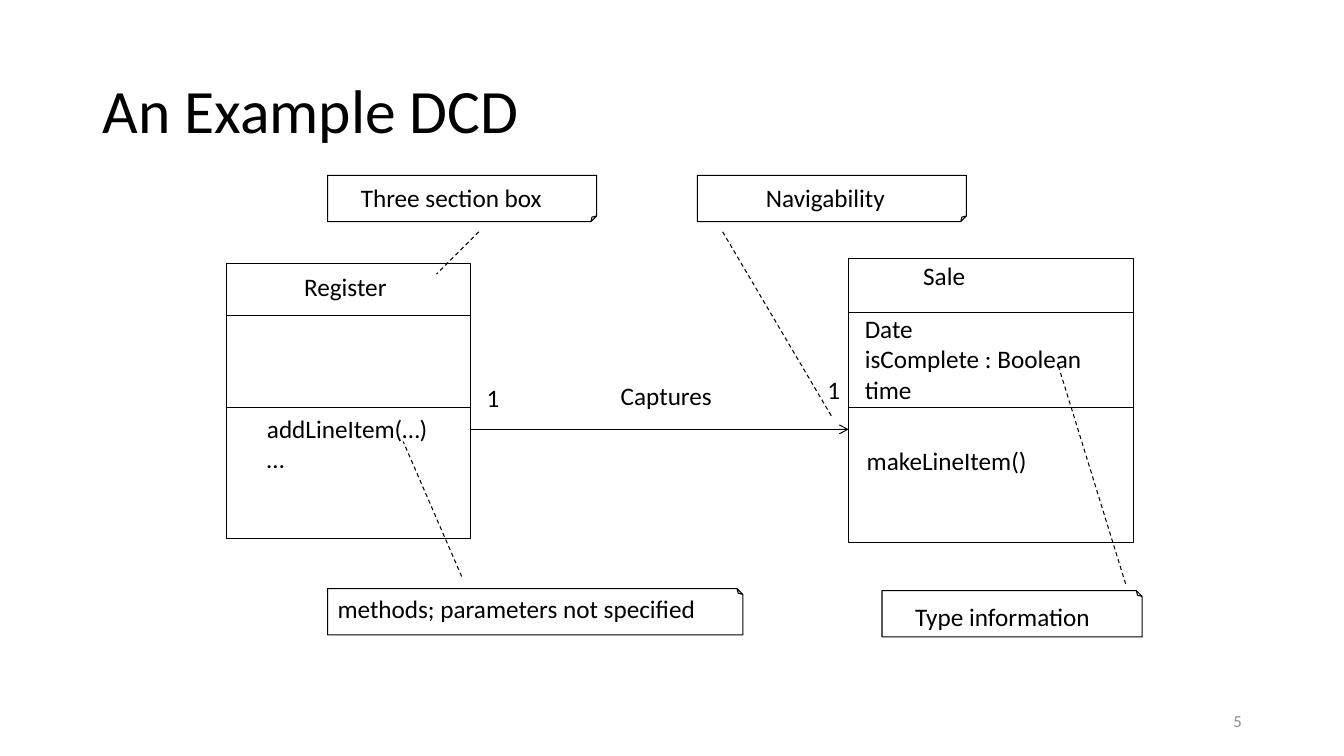
"""Build a slide that explains the parts of a design class diagram."""
from lxml import etree
from pptx import Presentation
from pptx.dml.color import RGBColor
from pptx.enum.dml import MSO_LINE
from pptx.enum.shapes import MSO_CONNECTOR, MSO_SHAPE
from pptx.enum.text import MSO_ANCHOR, MSO_AUTO_SIZE, PP_ALIGN
from pptx.oxml.ns import qn
from pptx.util import Pt

RECT, NOTE = MSO_SHAPE.RECTANGLE, MSO_SHAPE.FOLDED_CORNER
LINE, DASH = MSO_CONNECTOR.STRAIGHT, MSO_LINE.DASH
MIDDLE, RIGHT = MSO_ANCHOR.MIDDLE, PP_ALIGN.RIGHT
GROW = MSO_AUTO_SIZE.SHAPE_TO_FIT_TEXT


def paint(fmt, color):
    fmt.fill.solid()
    fmt.fill.fore_color.rgb = RGBColor.from_string(color)


def link(x1, y1, x2, y2):
    line = slide.shapes.add_connector(LINE, Pt(x1), Pt(y1), Pt(x2), Pt(y2))
    paint(line.line, "000000")
    line.line.width = Pt(0.75)
    etree.SubElement(line._element.spPr, qn("a:effectLst"))
    return line


deck = Presentation()
deck.slide_width, deck.slide_height = Pt(960), Pt(540)
slide = deck.slides.add_slide(deck.slide_layouts[6])

boxes = [
    (RECT, 162, 187.9, 174.2, 196.6, False),
    (RECT, 606.2, 184.3, 203.8, 203, False),
    (NOTE, 234, 125.3, 192.2, 33.1, False),
    (NOTE, 498.2, 125.3, 192.2, 33.1, False),
    (NOTE, 234, 420.5, 296.6, 33.1, True),
    (NOTE, 630, 421.9, 185.8, 33.1, True),
]
for kind, x, y, w, h, flip in boxes:
    box = slide.shapes.add_shape(kind, Pt(x), Pt(y), Pt(w), Pt(h))
    box.shadow.inherit = False
    box.fill.background()
    paint(box.line, "000000")
    box.line.width = Pt(0.75)
    if kind == NOTE:
        fold = box._element.spPr.find(qn("a:prstGeom")).find(qn("a:avLst"))
        etree.SubElement(fold, qn("a:gd"), name="adj", fmla="val 12500")
    if flip:
        box._element.spPr.find(qn("a:xfrm")).set("flipV", "1")

for x, w, tops in [(162, 174.2, (225.4, 290.9)), (606.2, 203.8, (223.2, 290.9))]:
    for y in tops:
        link(x, y, x + w, y)

arrow = link(336.2, 306.7, 606.2, 306.7)
stroke = arrow._element.spPr.find(qn("a:ln"))
etree.SubElement(stroke, qn("a:tailEnd"), type="arrow")

for ends in [
    (342, 165.6, 311.8, 195.8),
    (329.8, 411.8, 288, 315.4),
    (516.2, 165.6, 594, 297.4),
    (756, 261.4, 804.2, 417.6),
]:
    link(*ends).line.dash_style = DASH

labels = [
    ("Register", 210.2, 190.1, 74.2),
    ("addLineItem(…)\n…", 183.6, 291.6, 130.3),
    ("Sale", 652.3, 182.2, 44.6),
    ("Date\nisComplete : Boolean\ntime", 610.6, 220.3, 171.4),
    ("makeLineItem()", 612, 314.6, 130.3),
    ("Captures", 436.3, 267.8, 80.6),
    ("1", 340.6, 269.3, 24.5),
    ("1", 583.9, 263.5, 24.5),
    ("Three section box", 250.6, 126.7, 145.4),
    ("Navigability", 540, 126.7, 100.1),
    ("methods; parameters not specified", 234, 420.5, 272.9),
    ("Type information", 646.6, 426.2, 141.1),
]
for text, x, y, w in labels:
    rows = text.count("\n") + 1
    label = slide.shapes.add_textbox(Pt(x), Pt(y), Pt(w), Pt(7.2 + 21.6 * rows))
    frame = label.text_frame
    frame.text = text
    frame.word_wrap = False
    frame.auto_size = GROW
    for para in frame.paragraphs:
        para.font.name, para.font.size = "Calibri", Pt(18)
        paint(para.font, "000000")

for text, x, y, w, h, size, color in [
    ("An Example DCD", 66.2, 28.8, 828, 104.4, 44, "000000"),
    ("5", 678.2, 500.4, 216, 28.8, 12, "8C8C8C"),
]:
    frame = slide.shapes.add_textbox(Pt(x), Pt(y), Pt(w), Pt(h)).text_frame
    frame.text = text
    frame.word_wrap = True
    frame.vertical_anchor = MIDDLE
    para = frame.paragraphs[0]
    para.font.name, para.font.size = "Calibri", Pt(size)
    paint(para.font, color)
    if text == "5":
        para.alignment = RIGHT
    else:
        para.line_spacing = 0.9

deck.save("out.pptx")
